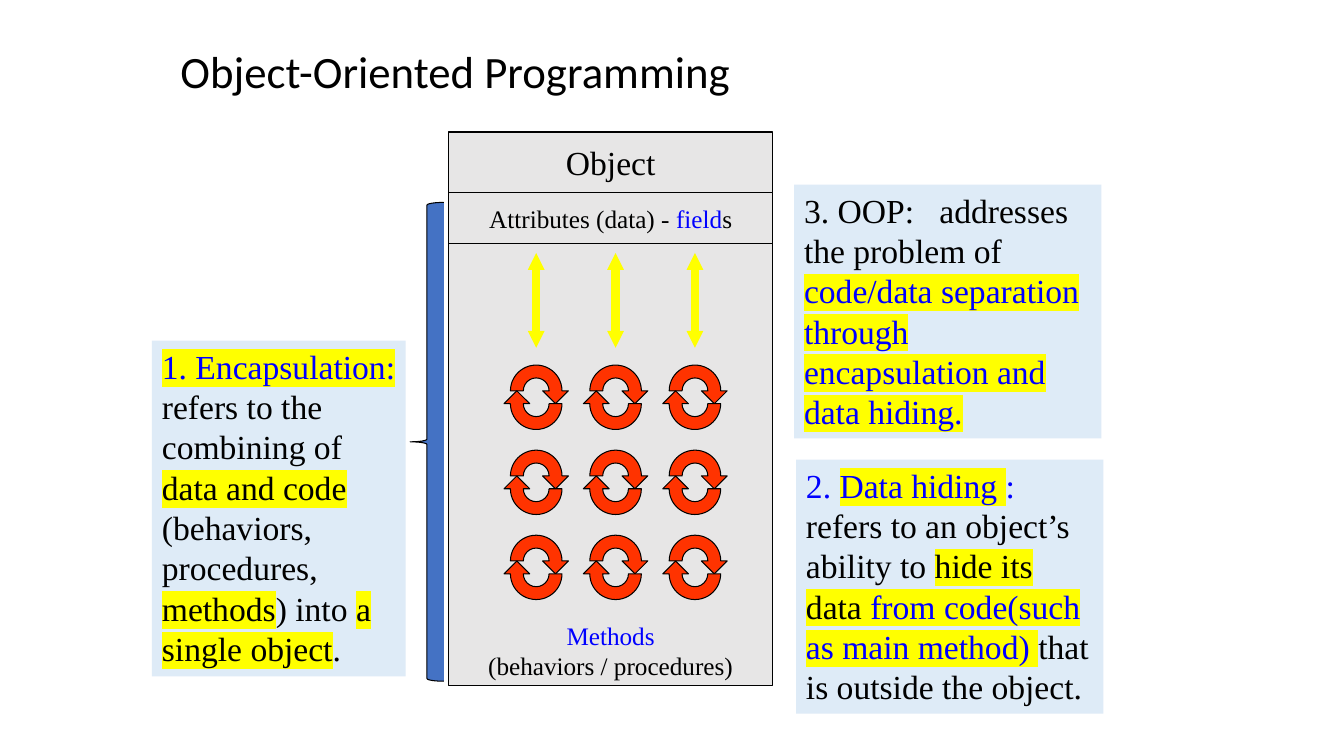
from dataclasses import dataclass
from lxml import etree
from pptx import Presentation
from pptx import util as u
from pptx.dml.color import RGBColor
from pptx.enum import shapes, text
from pptx.oxml.ns import qn

COLORS = {
    "black": "000000", "blue": "0000FF", "yellow": "FFFF00", "note": "DEEBF7",
    "panel": "E7E6E6", "brace": "4472C4", "cycle": "FF3300",
}
SERIF = "Times New Roman"
HALF_TURN = 180 * 60000


@dataclass
class Span:
    words: str
    color: str = "black"
    marked: bool = False


@dataclass
class Box:
    left: float
    top: float
    width: float
    height: float


@dataclass
class Note:
    box: Box
    paragraphs: list[list[Span]]
    tab: float | None = None


@dataclass
class Section:
    height: float
    size: float
    anchor: text.MSO_ANCHOR
    lines: list[list[Span]]


def rgb(name: str) -> RGBColor:
    return RGBColor.from_string(COLORS[name])


def paint(s, fill: str, outlined: bool) -> None:
    s.shadow.inherit = False
    s.fill.solid()
    s.fill.fore_color.rgb = rgb(fill)
    if outlined:
        s.line.color.rgb = rgb("black")
        s.line.width = u.Pt(0.75)
    else:
        s.line.fill.background()


def add_preset(sp, kind, box: Box, fill: str, outlined: bool):
    s = sp.add_shape(kind, u.Pt(box.left), u.Pt(box.top), u.Pt(box.width), u.Pt(box.height))
    paint(s, fill, outlined)
    return s


def add_spans(p, spans: list[Span], size: float) -> None:
    for span in spans:
        r = p.add_run()
        r.text = span.words
        r.font.size = u.Pt(size)
        r.font.name = SERIF
        r.font.color.rgb = rgb(span.color)
        if span.marked:
            mark = etree.Element(qn("a:highlight"))
            etree.SubElement(mark, qn("a:srgbClr"), val=COLORS["yellow"])
            r.font._element.find(qn("a:solidFill")).addnext(mark)


def add_note(sp, note: Note) -> None:
    s = add_preset(sp, shapes.MSO_SHAPE.RECTANGLE, note.box, "note", False)
    tf = s.text_frame
    tf.word_wrap = True
    tf.auto_size = text.MSO_AUTO_SIZE.SHAPE_TO_FIT_TEXT
    tf.vertical_anchor = text.MSO_ANCHOR.TOP
    for i, spans in enumerate(note.paragraphs):
        p = tf.add_paragraph() if i else tf.paragraphs[0]
        p.alignment = text.PP_ALIGN.LEFT
        if note.tab:
            tabs = etree.SubElement(p._p.get_or_add_pPr(), qn("a:tabLst"))
            etree.SubElement(tabs, qn("a:tab"), pos=str(u.Pt(note.tab)), algn="l")
        add_spans(p, spans, 24)


def add_section(sp, section: Section, top: float) -> None:
    box = Box(320.2, top, 232, section.height)
    s = add_preset(sp, shapes.MSO_SHAPE.RECTANGLE, box, "panel", True)
    tf = s.text_frame
    tf.word_wrap = False
    tf.vertical_anchor = section.anchor
    p = tf.paragraphs[0]
    p.alignment = text.PP_ALIGN.CENTER
    for i, spans in enumerate(section.lines):
        if i:
            p.add_line_break()
        add_spans(p, spans, section.size)


def bend(segment, radius: float, start: int, swing: int) -> None:
    r = str(u.Pt(radius))
    arc = etree.Element(qn("a:arcTo"), wR=r, hR=r, stAng=str(start), swAng=str(swing))
    segment.getparent().replace(segment, arc)


def add_half_cycle(sp, x: float, y: float, turn: int) -> None:
    unit = 4.6
    outline = [(2, 0), (-2, 0), (-4, 0), (0, -4), (4, 0), (5, 0), (3, 2), (1, 0)]
    points = [
        (u.Pt(x + turn * unit * dx), u.Pt(y + turn * unit * dy)) for dx, dy in outline
    ]
    builder = sp.build_freeform(*points[0], scale=1.0)
    builder.add_line_segments(points[1:], close=True)
    s = builder.convert_to_shape()
    paint(s, "cycle", True)
    segments = list(s._element.iter(qn("a:lnTo")))
    right, left = (0, HALF_TURN) if turn == 1 else (HALF_TURN, 0)
    bend(segments[0], 2 * unit, right, -HALF_TURN)
    bend(segments[3], 4 * unit, left, HALF_TURN)
    segments[2].getparent().remove(segments[2])


def add_double_arrow(sp, x: float) -> None:
    s = sp.add_connector(
        shapes.MSO_CONNECTOR.STRAIGHT, u.Pt(x), u.Pt(248.4), u.Pt(x), u.Pt(180.7)
    )
    s.line.color.rgb = rgb("yellow")
    s.line.width = u.Pt(6)
    for end in ("a:headEnd", "a:tailEnd"):
        etree.SubElement(s.line._ln, qn(end), type="triangle", w="sm", len="sm")
    etree.SubElement(s._element.spPr, qn("a:effectLst"))


def add_title(s) -> None:
    s.left, s.top, s.width, s.height = u.Pt(121.7), u.Pt(13.7), u.Pt(416.2), u.Pt(78.5)
    tf = s.text_frame
    tf.text = "Object-Oriented Programming"
    tf.word_wrap = True
    tf.auto_size = text.MSO_AUTO_SIZE.NONE
    tf.vertical_anchor = text.MSO_ANCHOR.MIDDLE
    p = tf.paragraphs[0]
    p.alignment = text.PP_ALIGN.LEFT
    p.line_spacing = 0.9
    r = p.runs[0]
    r.font.size = u.Pt(32)
    r.font.name = "Calibri"
    r.font.color.rgb = rgb("black")


NOTES = [
    Note(Box(108.6, 243.4, 181.2, 239.8), [
        [Span("1. Encapsulation:", "blue", True)],
        [Span("refers to the combining of "), Span("data and code ", marked=True),
         Span("(behaviors, procedures, "), Span("methods", marked=True),
         Span(") into "), Span("a single object", marked=True), Span(".")],
    ]),
    Note(Box(567.2, 131.8, 219.6, 181.4), [
        [Span("3. OOP:\taddresses the problem of "),
         Span("code/data separation through encapsulation and data hiding.", "blue", True)],
    ], tab=96.7),
    Note(Box(568.6, 328.3, 219.6, 181.4), [
        [Span("2. ", "blue"), Span("Data hiding ", "blue", True), Span(": ", "blue"),
         Span("refers to an object’s ability to "), Span("hide its data ", marked=True),
         Span("from code(such as main method) ", "blue", True),
         Span("that is outside the object.")],
    ]),
]
SECTIONS = [
    Section(43.2, 24, text.MSO_ANCHOR.MIDDLE, [[Span("Object")]]),
    Section(36.7, 18, text.MSO_ANCHOR.MIDDLE,
            [[Span("Attributes (data) - "), Span("field", "blue"), Span("s")]]),
    Section(315.4, 18, text.MSO_ANCHOR.BOTTOM,
            [[Span("Methods", "blue")], [Span("(behaviors / procedures)")]]),
]


def main() -> None:
    prs = Presentation()
    prs.slide_width, prs.slide_height = u.Pt(960), u.Pt(540)
    sp = prs.slides.add_slide(prs.slide_layouts[5]).shapes
    add_title(sp.title)
    for note in NOTES:
        add_note(sp, note)
    brace_box = Box(293, 144.6, 24, 342)
    brace = add_preset(sp, shapes.MSO_SHAPE.LEFT_BRACE, brace_box, "brace", True)
    brace.adjustments[0] = 0.08
    top = 94.3
    for section in SECTIONS:
        add_section(sp, section, top)
        top += section.height
    columns = [383 + 56.7 * i for i in range(3)]
    for row in range(3):
        y = 279.2 + 60.75 * row
        for x in columns:
            add_half_cycle(sp, x, y, 1)
            add_half_cycle(sp, x, y + 9.2, -1)
    for x in columns:
        add_double_arrow(sp, x)
    prs.save("out.pptx")


if __name__ == "__main__":
    main()
